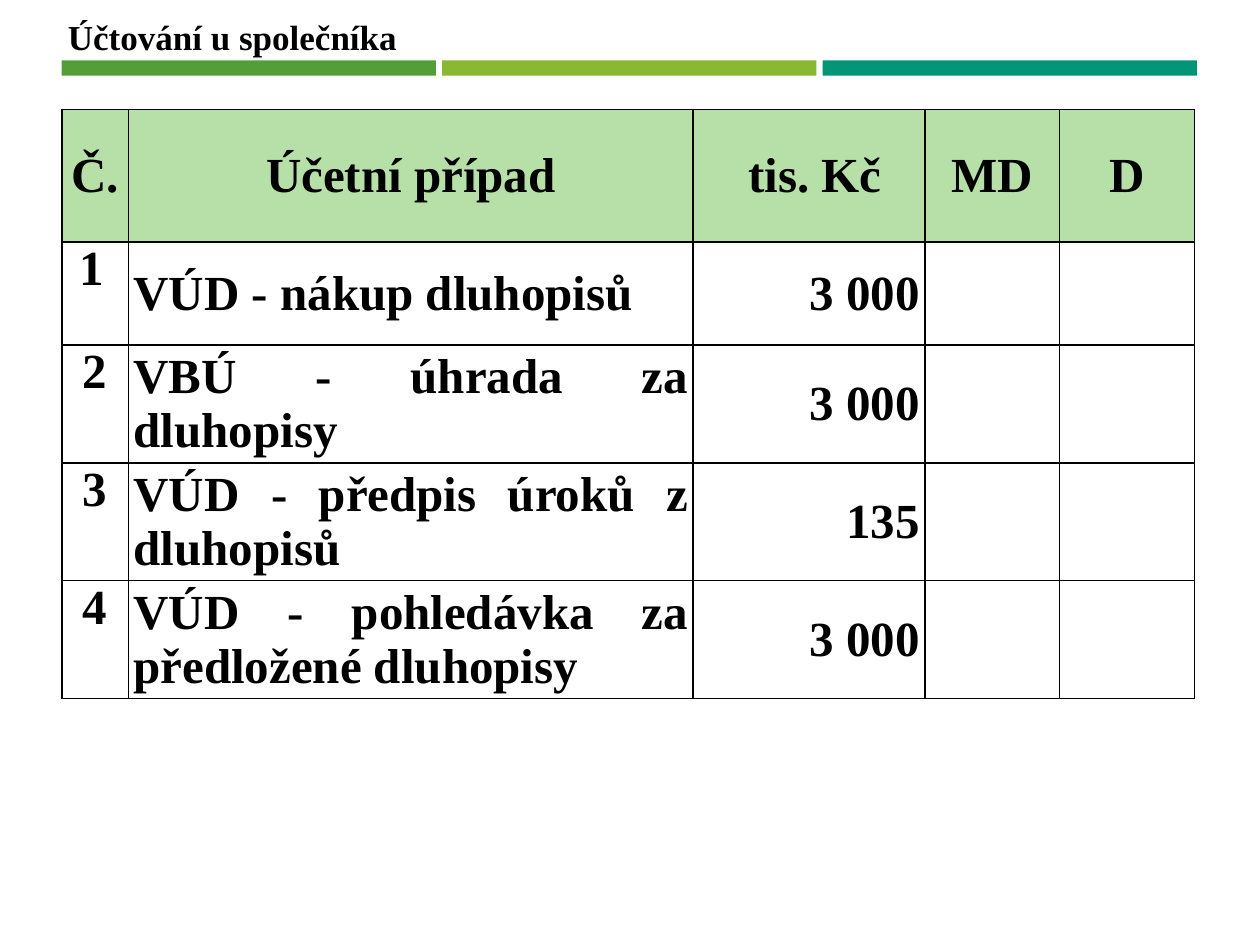
import dataclasses

import lxml.etree
import pptx
import pptx.dml.color
import pptx.enum.shapes
import pptx.enum.text
import pptx.oxml.ns
import pptx.util

Inches = pptx.util.Inches
Pt = pptx.util.Pt
Align = pptx.enum.text.PP_ALIGN
Anchor = pptx.enum.text.MSO_ANCHOR

FONT = "Times New Roman"
COLORS = {
    "text": "000000",
    "border": "000000",
    "header": "B7E0A8",
    "green": "549E39",
    "lime": "8AB833",
    "teal": "029676",
}


@dataclasses.dataclass(frozen=True)
class Entry:
    number: str
    case: str
    amount: str


@dataclasses.dataclass(frozen=True)
class CellStyle:
    align: Align
    anchor: Anchor = Anchor.MIDDLE
    left_margin: float = 0.04


HEADINGS = ["Č.", "Účetní případ", " tis. Kč", "MD", "D"]
COLUMN_WIDTHS = [0.53, 4.48, 1.84, 1.07, 1.07]
HEADER_HEIGHT, ENTRY_HEIGHT = 1.05, 0.82
ENTRIES = [
    Entry("1", "VÚD - nákup dluhopisů", "3 000"),
    Entry("2", "VBÚ - úhrada za dluhopisy", "3 000"),
    Entry("3", "VÚD - předpis úroků z dluhopisů", "135"),
    Entry("4", "VÚD - pohledávka za předložené dluhopisy", "3 000"),
]
HEADING = CellStyle(Align.CENTER)
FIRST_NUMBER = CellStyle(Align.LEFT, Anchor.TOP, 0.14)
NUMBER = CellStyle(Align.CENTER, Anchor.TOP)
CASE = CellStyle(Align.JUSTIFY)
AMOUNT = CellStyle(Align.RIGHT)


def rgb(name: str) -> pptx.dml.color.RGBColor:
    return pptx.dml.color.RGBColor.from_string(COLORS[name])


def set_font(para, size: float) -> None:
    para.font.name = FONT
    para.font.size = Pt(size)
    para.font.bold = True
    para.font.color.rgb = rgb("text")


def add_bars(slide) -> None:
    width, gap = 2.97, 0.05
    for index, color in enumerate(["green", "lime", "teal"]):
        bar = slide.shapes.add_shape(
            pptx.enum.shapes.MSO_SHAPE.RECTANGLE,
            Inches(0.49 + index * (width + gap)), Inches(0.48),
            Inches(width), Inches(0.12),
        )
        bar.shadow.inherit = False
        bar.fill.solid()
        bar.fill.fore_color.rgb = rgb(color)
        bar.line.fill.background()


def add_title(slide, text: str) -> None:
    box = slide.shapes.add_textbox(
        Inches(0.44), Inches(0.07), Inches(2.83), Inches(0.44))
    box.text_frame.word_wrap = False
    box.text_frame.auto_size = pptx.enum.text.MSO_AUTO_SIZE.SHAPE_TO_FIT_TEXT
    para = box.text_frame.paragraphs[0]
    para.text = text
    set_font(para, 20)


def add_borders(cell) -> None:
    """Put a thin line on all four sides, ahead of the fill as the schema asks."""
    properties = cell._tc.get_or_add_tcPr()
    for position, side in enumerate(["lnL", "lnR", "lnT", "lnB"]):
        line = lxml.etree.Element(pptx.oxml.ns.qn(f"a:{side}"), w=str(Pt(1)))
        fill = lxml.etree.SubElement(line, pptx.oxml.ns.qn("a:solidFill"))
        lxml.etree.SubElement(
            fill, pptx.oxml.ns.qn("a:srgbClr"), val=COLORS["border"])
        properties.insert(position, line)


def write_cell(cell, text: str, style: CellStyle) -> None:
    cell.vertical_anchor = style.anchor
    cell.margin_left = Inches(style.left_margin)
    cell.margin_right = Inches(0.04)
    cell.margin_top = cell.margin_bottom = 0
    para = cell.text_frame.paragraphs[0]
    para.text = text
    para.alignment = style.align
    set_font(para, 28)


def add_entry_table(slide) -> None:
    heights = [HEADER_HEIGHT] + [ENTRY_HEIGHT] * len(ENTRIES)
    table = slide.shapes.add_table(
        len(heights), len(COLUMN_WIDTHS), Inches(0.49), Inches(0.87),
        Inches(sum(COLUMN_WIDTHS)), Inches(sum(heights)),
    ).table
    table.first_row = table.horz_banding = False
    for column, width in zip(table.columns, COLUMN_WIDTHS):
        column.width = Inches(width)
    for row, height in zip(table.rows, heights):
        row.height = Inches(height)
    for cell in table.iter_cells():
        cell.fill.background()
        add_borders(cell)

    for index, heading in enumerate(HEADINGS):
        cell = table.cell(0, index)
        cell.fill.solid()
        cell.fill.fore_color.rgb = rgb("header")
        write_cell(cell, heading, HEADING)
    for index, entry in enumerate(ENTRIES, start=1):
        number_style = FIRST_NUMBER if index == 1 else NUMBER
        write_cell(table.cell(index, 0), entry.number, number_style)
        write_cell(table.cell(index, 1), entry.case, CASE)
        write_cell(table.cell(index, 2), entry.amount, AMOUNT)


def main() -> None:
    deck = pptx.Presentation()
    deck.slide_width, deck.slide_height = Inches(10), Inches(7.5)
    slide = deck.slides.add_slide(deck.slide_layouts[6])
    add_bars(slide)
    add_title(slide, "Účtování u společníka")
    add_entry_table(slide)
    deck.save("out.pptx")


if __name__ == "__main__":
    main()
